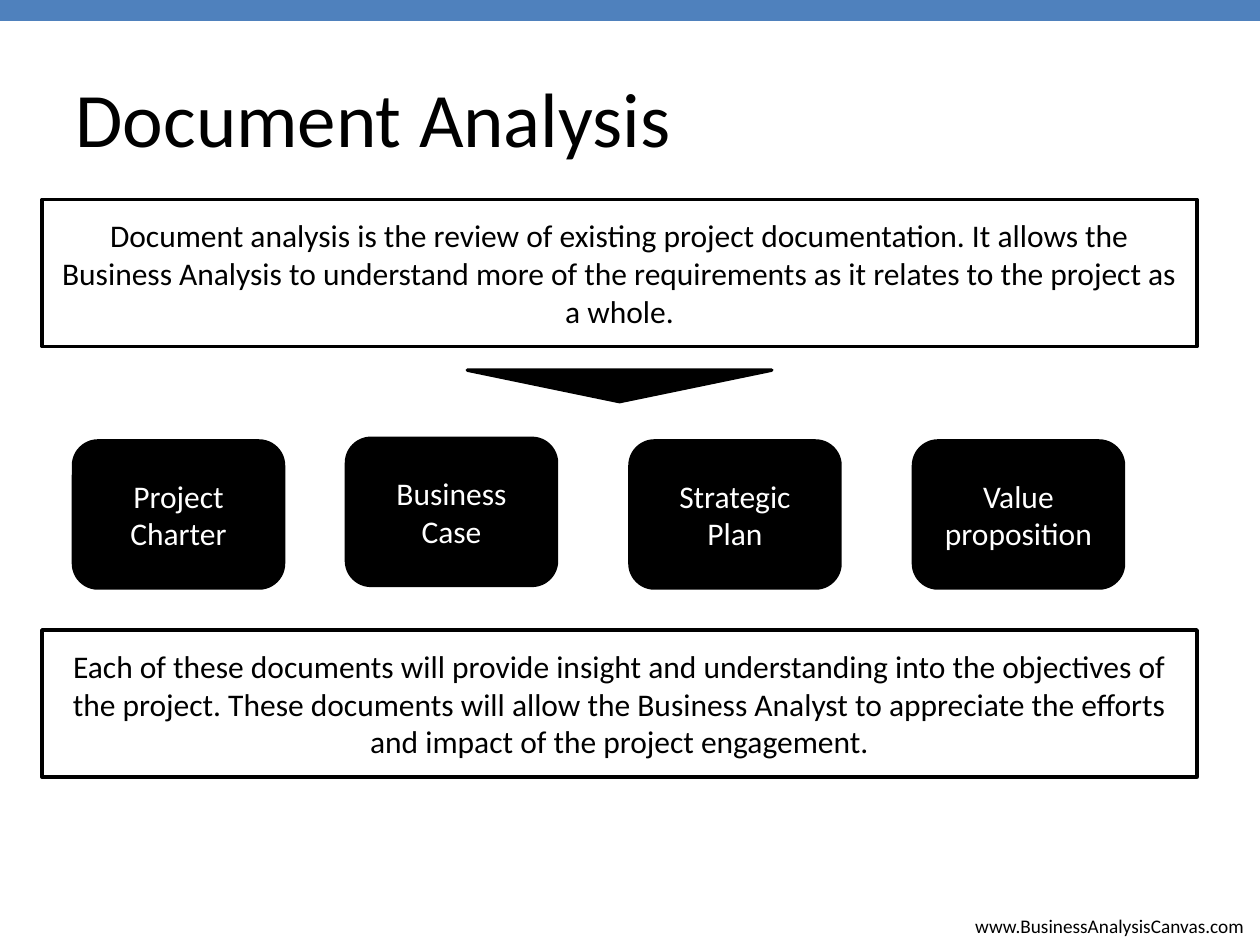
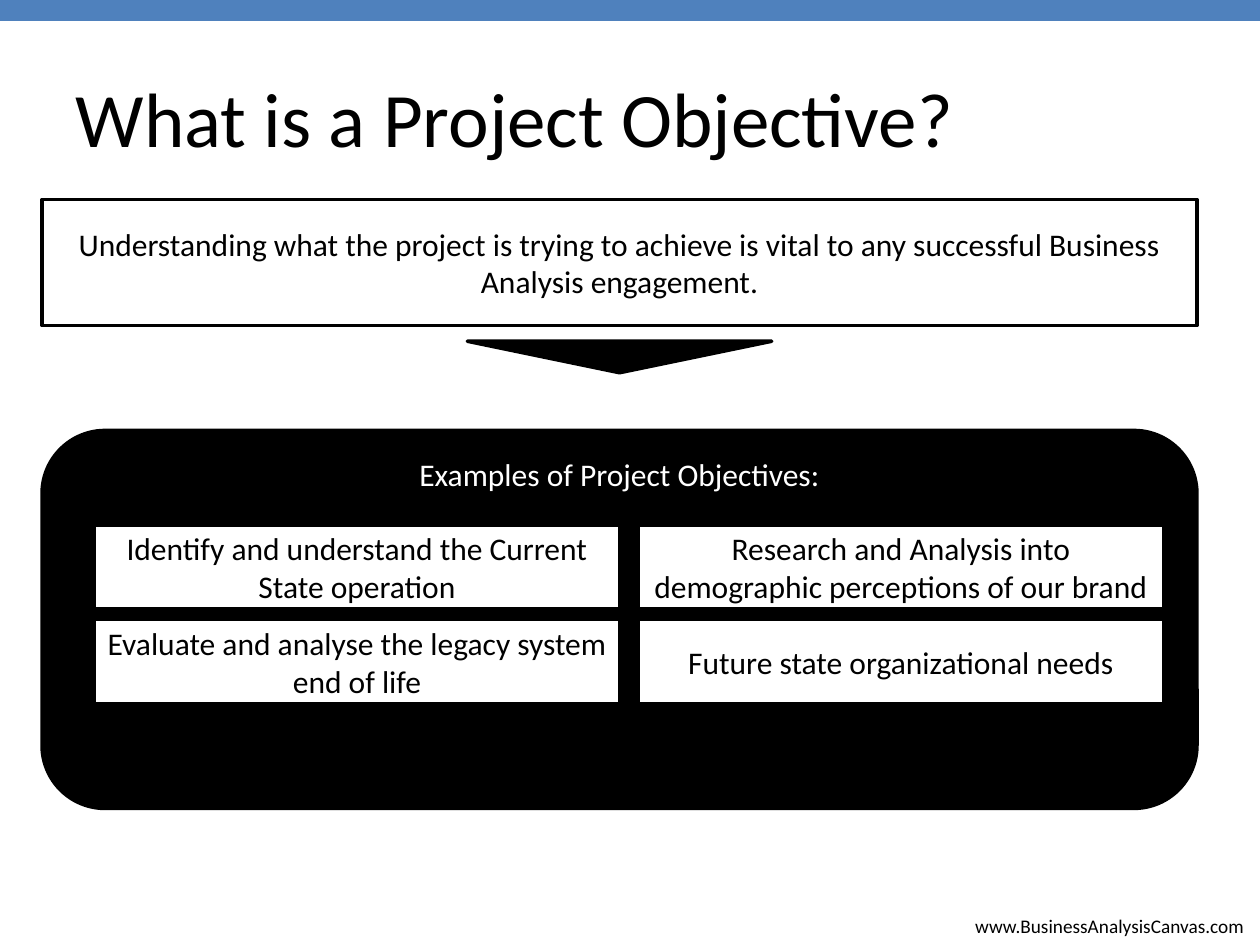
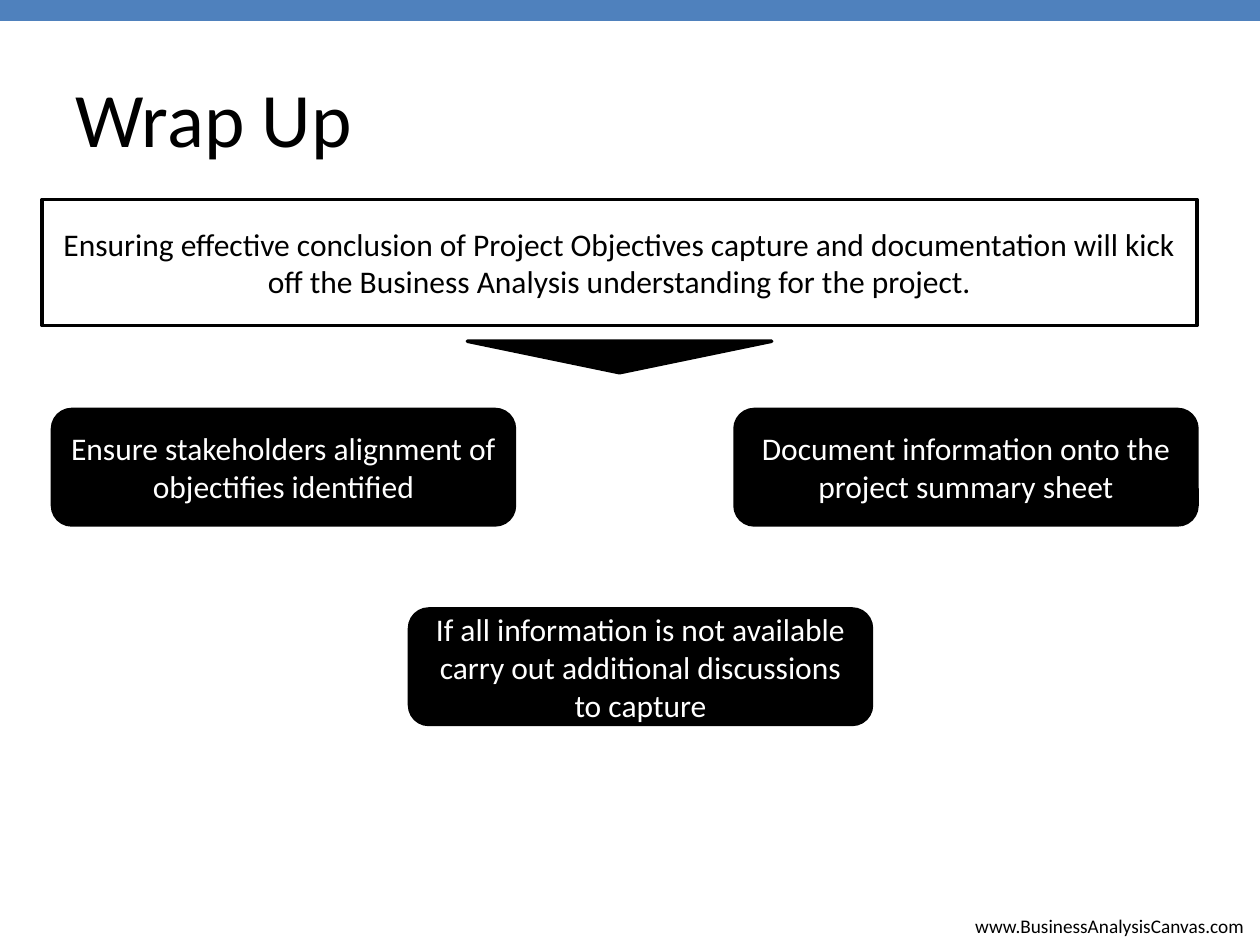
from dataclasses import dataclass

from pptx import Presentation
from pptx import util as u
from pptx.dml.color import RGBColor
from pptx.enum import shapes, text


# Theme: colours, type and line sizes
@dataclass(frozen=True)
class Theme:
    accent: RGBColor = RGBColor(0x4F, 0x81, 0xBD)
    ink: RGBColor = RGBColor(0, 0, 0)
    paper: RGBColor = RGBColor(255, 255, 255)
    font: str = "Calibri"
    title_size: int = 44
    body_size: int = 18
    footer_size: int = 11
    outline: int = 2


THEME = Theme()
KIND = shapes.MSO_SHAPE
ANCHOR = text.MSO_ANCHOR
ALIGN = text.PP_ALIGN

# Grid: 120 columns by 90 rows on a 10 by 7.5 inch slide
COLUMNS, ROWS = 120, 90
WIDTH, HEIGHT = u.Inches(10), u.Inches(7.5)
MARGIN, FULL_WIDTH = 4, 110
STATEMENT_TOP = 19
FOOTER = "www.BusinessAnalysisCanvas.com"


@dataclass(frozen=True)
class Area:
    column: float
    row: float
    columns: float
    rows: float

    def lengths(self) -> tuple[int, int, int, int]:
        return (round(self.column * WIDTH / COLUMNS), round(self.row * HEIGHT / ROWS),
                round(self.columns * WIDTH / COLUMNS), round(self.rows * HEIGHT / ROWS))


@dataclass(frozen=True)
class Box:
    area: Area
    wording: str = ""
    kind: KIND = KIND.RECTANGLE
    dark: bool = False
    anchor: ANCHOR = ANCHOR.MIDDLE


def statement(wording: str, rows: float, row: float = STATEMENT_TOP) -> Box:
    """Full-width outlined statement."""
    return Box(Area(MARGIN, row, FULL_WIDTH, rows), wording)


def pointer(row: float) -> Box:
    """Triangle centred under a statement."""
    columns = 29
    column = MARGIN + (FULL_WIDTH - columns) / 2
    return Box(Area(column, row, columns, 3), kind=KIND.ISOSCELES_TRIANGLE, dark=True)


def card(wording: str, area: Area, anchor: ANCHOR = ANCHOR.MIDDLE) -> Box:
    """Dark rounded card."""
    return Box(area, wording, KIND.ROUNDED_RECTANGLE, True, anchor)


# Drawing functions
def write(frame, wording: str, size: int, color: RGBColor, align: ALIGN) -> None:
    frame.text = wording
    paragraph = frame.paragraphs[0]
    paragraph.alignment = align
    font = paragraph.runs[0].font
    font.name, font.size = THEME.font, u.Pt(size)
    font.color.rgb = color


def draw_box(slide, box: Box) -> None:
    shape = slide.shapes.add_shape(box.kind, *box.area.lengths())
    shape.shadow.inherit = False
    shape.fill.solid()
    shape.fill.fore_color.rgb = THEME.ink if box.dark else THEME.paper
    shape.line.color.rgb = THEME.ink
    shape.line.width = u.Pt(THEME.outline)
    if box.kind == KIND.ISOSCELES_TRIANGLE:
        shape.rotation = 180
    if box.wording:
        shape.text_frame.vertical_anchor = box.anchor
        write(shape.text_frame, box.wording, THEME.body_size,
              THEME.paper if box.dark else THEME.ink, ALIGN.CENTER)


def draw_frame(slide, heading: str) -> None:
    """Top band, footer address and title."""
    band = slide.shapes.add_shape(KIND.RECTANGLE, *Area(0, 0, COLUMNS, 2).lengths())
    band.shadow.inherit = False
    band.fill.solid()
    band.fill.fore_color.rgb = THEME.accent
    band.line.fill.background()

    address = slide.shapes.add_textbox(*Area(91.7, 86.5, 28.3, 3.5).lengths()).text_frame
    address.word_wrap = False
    address.auto_size = text.MSO_AUTO_SIZE.SHAPE_TO_FIT_TEXT
    write(address, FOOTER, THEME.footer_size, THEME.ink, ALIGN.LEFT)

    title = slide.shapes.title
    title.left, title.top, title.width, title.height = Area(6, 3.6, 108, 15).lengths()
    title.text_frame.vertical_anchor = ANCHOR.MIDDLE
    write(title.text_frame, heading, THEME.title_size, THEME.ink, ALIGN.LEFT)


# Slide contents
def document_analysis() -> list[Box]:
    documents = [
        ("Project Charter", 7, 42),
        ("Business Case", 33, 41.75),
        ("Strategic Plan", 60, 42),
        ("Value proposition", 87, 42),
    ]
    return [
        statement("Document analysis is the review of existing project documentation. "
                  "It allows the Business Analysis to understand more of the requirements "
                  "as it relates to the project as a whole.", 14),
        pointer(35.25),
        *(card(name, Area(column, row, 20, 14)) for name, column, row in documents),
        statement("Each of these documents will provide insight and understanding into "
                  "the objectives of the project. These documents will allow the Business "
                  "Analyst to appreciate the efforts and impact of the project engagement.",
                  14, row=60),
    ]


def project_objective() -> list[Box]:
    examples = [
        ["Identify and understand the Current State operation",
         "Evaluate and analyse the legacy system end of life"],
        ["Research and Analysis into demographic perceptions of our brand",
         "Future state organizational needs"],
    ]
    return [
        statement("Understanding what the project is trying to achieve is vital to any "
                  "successful Business Analysis engagement.", 12),
        pointer(32.5),
        card("Examples of Project Objectives:", Area(MARGIN, 41, FULL_WIDTH, 36), ANCHOR.TOP),
        *(Box(Area(9 + 51.8 * across, 50 + 9 * down, 50, 8), example)
          for across, stack in enumerate(examples)
          for down, example in enumerate(stack)),
    ]


def wrap_up() -> list[Box]:
    steps = [
        ("Ensure stakeholders alignment of objectifies identified", 5, 39),
        ("Document information onto the project summary sheet", 70, 39),
        ("If all information is not available carry out additional discussions to capture",
         39, 58),
    ]
    return [
        statement("Ensuring effective conclusion of Project Objectives capture and "
                  "documentation will kick off the Business Analysis understanding "
                  "for the project.", 12),
        pointer(32.5),
        *(card(step, Area(column, row, 44, 11)) for step, column, row in steps),
    ]


def main() -> None:
    deck = Presentation()
    deck.slide_width, deck.slide_height = WIDTH, HEIGHT
    title_only = deck.slide_layouts.get_by_name("Title Only")
    contents = {
        "Document Analysis": document_analysis(),
        "What is a Project Objective?": project_objective(),
        "Wrap Up": wrap_up(),
    }
    for heading, boxes in contents.items():
        slide = deck.slides.add_slide(title_only)
        draw_frame(slide, heading)
        for box in boxes:
            draw_box(slide, box)
    deck.save("out.pptx")


if __name__ == "__main__":
    main()
